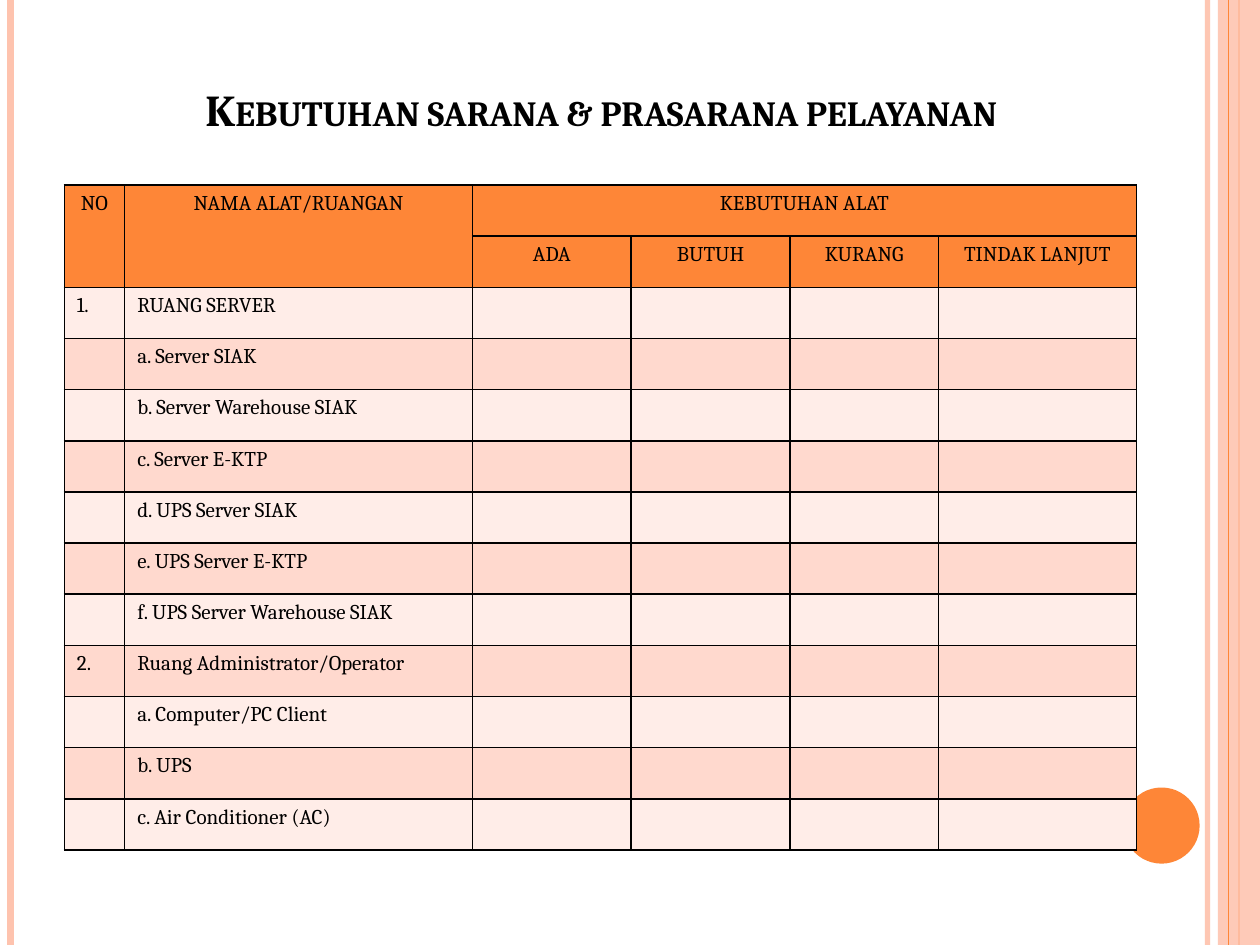
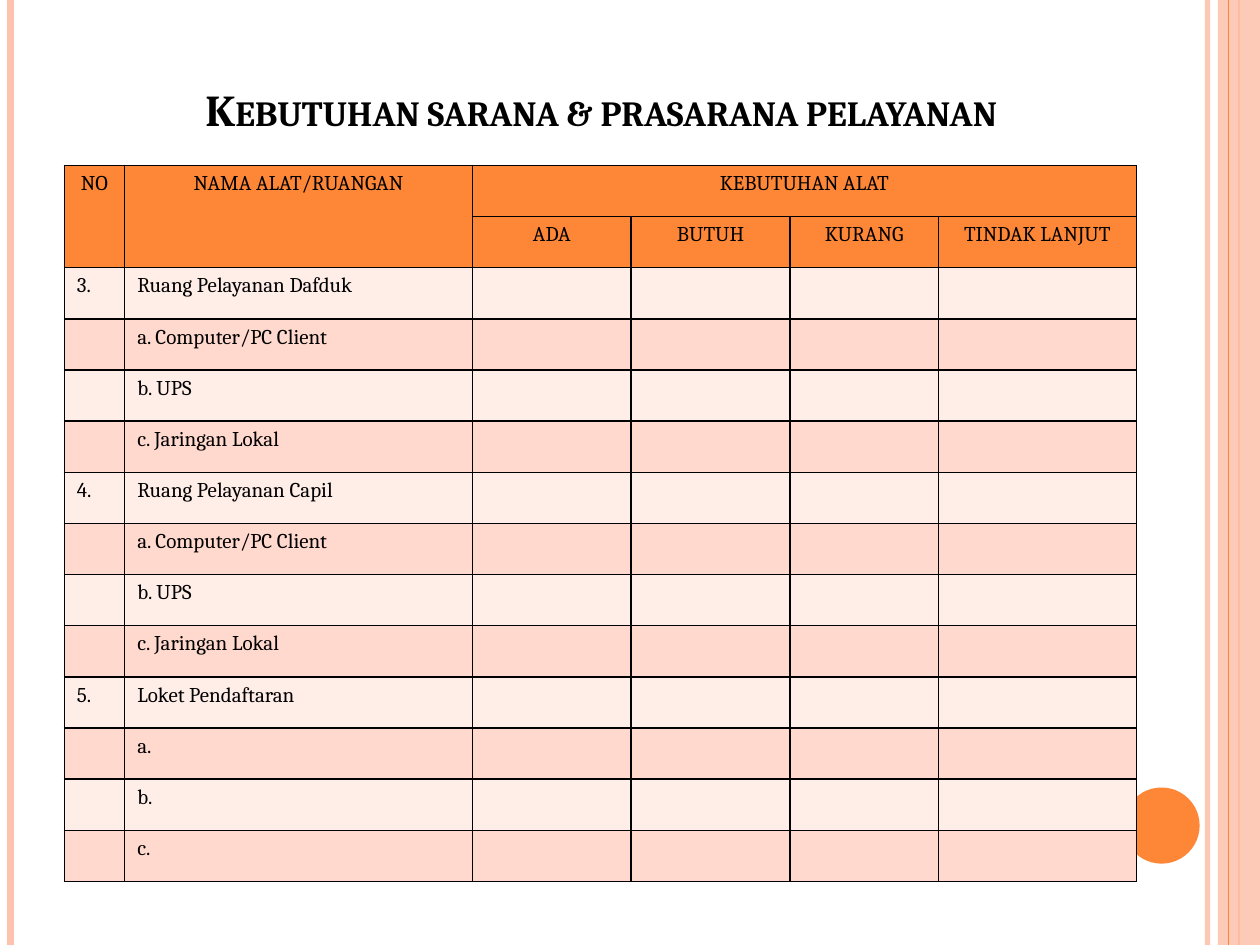
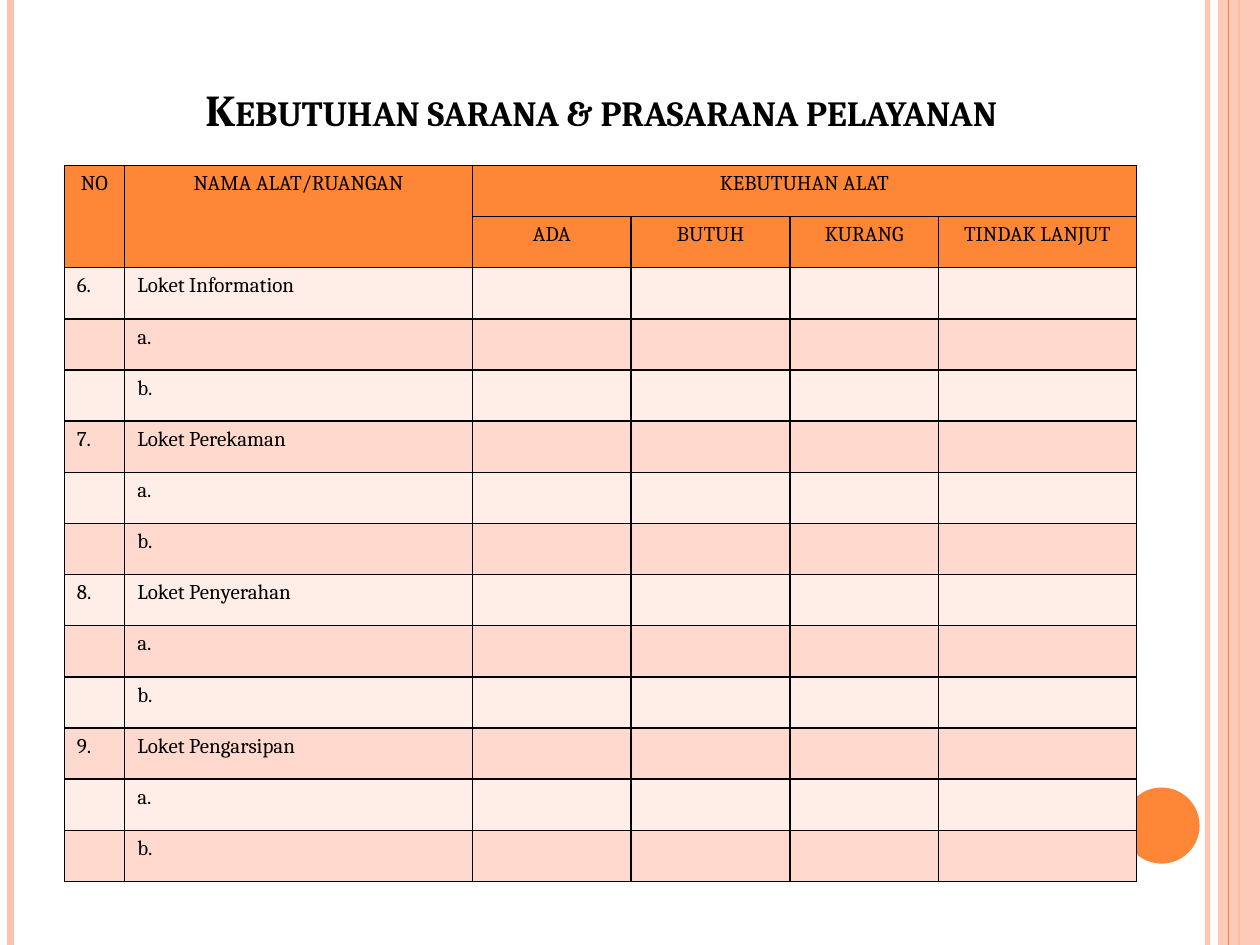
from dataclasses import dataclass
from typing import Iterator

from lxml import etree
from pptx import Presentation
from pptx import util as u
from pptx.dml.color import RGBColor
from pptx.enum import shapes, text
from pptx.oxml import ns

PX = 9525
SLIDE_WIDTH, SLIDE_HEIGHT = 960, 720
ORANGE = RGBColor(0xFE, 0x86, 0x37)
PEACH = RGBColor(0xFE, 0xC3, 0xAE)
ROW_LIGHT = RGBColor(0xFF, 0xED, 0xE8)
ROW_DARK = RGBColor(0xFF, 0xD9, 0xCE)
BLACK = RGBColor(0, 0, 0)
FONT = "Cambria"
TITLE = "Kebutuhan sarana & prasarana pelayanan"
TITLE_ONLY_LAYOUT = 5

TABLE_LEFT = 49
COLUMN_WIDTHS = (46, 265, 121, 121, 113, 151)
ROW_HEIGHT = 39
HEADER_ROWS = (
    ("NO", "NAMA ALAT/RUANGAN", "KEBUTUHAN ALAT", "", "", ""),
    ("", "", "ADA", "BUTUH", "KURANG", "TINDAK LANJUT"),
)
HEADER_MERGES = (((0, 0), (1, 0)), ((0, 1), (1, 1)), ((0, 2), (0, 5)))


@dataclass(frozen=True)
class Stripe:
    x: int
    color: RGBColor
    weight: float
    opacity: int = 100


@dataclass(frozen=True)
class Block:
    kind: shapes.MSO_SHAPE
    left: int
    top: int
    width: int
    height: int
    color: RGBColor
    opacity: int = 100


@dataclass(frozen=True)
class Room:
    number: int
    name: str
    items: tuple[str, ...]


@dataclass(frozen=True)
class Page:
    table_top: int
    rooms: tuple[Room, ...]


DECORATIONS = (
    Stripe(920, PEACH, 3, 93),
    Stripe(8, PEACH, 4.5),
    Stripe(944, ORANGE, 1.5),
    Block(shapes.MSO_SHAPE.RECTANGLE, 928, 0, 32, SLIDE_HEIGHT, PEACH, 87),
    Stripe(936, ORANGE, 0.75),
    Block(shapes.MSO_SHAPE.OVAL, 856, 600, 58, 58, ORANGE),
)

OFFICE_ITEMS = ("Computer/PC Client", "UPS", "Jaringan Lokal")
PAGES = (
    Page(141, (
        Room(1, "RUANG SERVER", (
            "Server SIAK", "Server Warehouse SIAK", "Server E-KTP",
            "UPS Server SIAK", "UPS Server E-KTP", "UPS Server Warehouse SIAK",
        )),
        Room(2, "Ruang Administrator/Operator",
             ("Computer/PC Client", "UPS", "Air Conditioner (AC)")),
    )),
    Page(126, (
        Room(3, "Ruang Pelayanan Dafduk", OFFICE_ITEMS),
        Room(4, "Ruang Pelayanan Capil", OFFICE_ITEMS),
        Room(5, "Loket Pendaftaran", ("",) * 3),
    )),
    Page(126, tuple(
        Room(number, f"Loket {name}", ("",) * 2)
        for number, name in enumerate(
            ("Information", "Perekaman", "Penyerahan", "Pengarsipan"), start=6)
    )),
)


def px(*lengths: int) -> list[u.Emu]:
    return [u.Emu(length * PX) for length in lengths]


def set_opacity(element, percent: int) -> None:
    if percent < 100:
        color = next(element.iter(ns.qn("a:srgbClr")))
        etree.SubElement(color, ns.qn("a:alpha"), val=str(percent * 1000))


def solid_line(tag: str, color: RGBColor, weight: float):
    line = etree.Element(ns.qn(tag), w=str(u.Pt(weight)))
    fill = etree.SubElement(line, ns.qn("a:solidFill"))
    etree.SubElement(fill, ns.qn("a:srgbClr"), val=str(color))
    return line


def draw_stripe(slide, stripe: Stripe):
    connector = slide.shapes.add_connector(
        shapes.MSO_CONNECTOR.STRAIGHT, *px(stripe.x, 0, stripe.x, SLIDE_HEIGHT))
    connector.line.color.rgb = stripe.color
    connector.line.width = u.Pt(stripe.weight)
    properties = connector.element.spPr
    set_opacity(properties, stripe.opacity)
    etree.SubElement(properties, ns.qn("a:effectLst"))
    return connector


def draw_block(slide, block: Block):
    shape = slide.shapes.add_shape(
        block.kind, *px(block.left, block.top, block.width, block.height))
    shape.shadow.inherit = False
    shape.fill.solid()
    shape.fill.fore_color.rgb = block.color
    shape.line.fill.background()
    set_opacity(shape.element.spPr, block.opacity)
    return shape


def decorate_master(presentation, slide) -> None:
    tree = presentation.slide_master.element.cSld.spTree
    for index, item in enumerate(DECORATIONS, start=2):
        draw = draw_stripe if isinstance(item, Stripe) else draw_block
        tree.insert(index, draw(slide, item).element)


def write_title(slide) -> None:
    title = slide.shapes.title
    title.left, title.top, title.width, title.height = px(27, 29, 862, 74)
    frame = title.text_frame
    frame.text = TITLE
    frame.auto_size = text.MSO_AUTO_SIZE.NONE
    frame.vertical_anchor = text.MSO_ANCHOR.BOTTOM
    frame.margin_bottom = 0
    paragraph = frame.paragraphs[0]
    paragraph.alignment = text.PP_ALIGN.CENTER
    font = paragraph.runs[0].font
    font.name, font.size, font.bold = FONT, u.Pt(25.2), True
    font.color.rgb = BLACK
    paragraph.runs[0]._r.get_or_add_rPr().set("cap", "small")


def fill_cell(cell, content: str, color: RGBColor, alignment: text.PP_ALIGN) -> None:
    cell.fill.solid()
    cell.fill.fore_color.rgb = color
    properties = cell._tc.get_or_add_tcPr()
    for index, side in enumerate(("a:lnL", "a:lnR", "a:lnT", "a:lnB")):
        properties.insert(index, solid_line(side, BLACK, 1))
    cell.text_frame.text = content
    paragraph = cell.text_frame.paragraphs[0]
    paragraph.alignment = alignment
    for run in paragraph.runs:
        run.font.name, run.font.size, run.font.bold = FONT, u.Pt(12), False
        run.font.color.rgb = BLACK
        run._r.get_or_add_rPr().insert(0, solid_line("a:ln", BLACK, 0.75))
    if not content:
        etree.SubElement(paragraph._p, ns.qn("a:endParaRPr"), sz="1200")


def room_rows(rooms: tuple[Room, ...]) -> Iterator[tuple[str, ...]]:
    blanks = ("",) * 4
    for room in rooms:
        yield (f"{room.number}.", room.name, *blanks)
        for letter, item in zip("abcdef", room.items):
            yield ("", f"{letter}. {item}".strip(), *blanks)


def draw_table(slide, page: Page) -> None:
    rows = [*HEADER_ROWS, *room_rows(page.rooms)]
    table = slide.shapes.add_table(
        len(rows), len(COLUMN_WIDTHS),
        *px(TABLE_LEFT, page.table_top, sum(COLUMN_WIDTHS), ROW_HEIGHT * len(rows)),
    ).table
    table.first_row = table.horz_banding = False
    for column, width in zip(table.columns, px(*COLUMN_WIDTHS)):
        column.width = width
    for row_index, row in enumerate(rows):
        table.rows[row_index].height = u.Emu(ROW_HEIGHT * PX)
        if row_index < len(HEADER_ROWS):
            color, alignment = ORANGE, text.PP_ALIGN.CENTER
        else:
            color = ROW_DARK if row_index % 2 else ROW_LIGHT
            alignment = text.PP_ALIGN.LEFT
        for column_index, content in enumerate(row):
            fill_cell(table.cell(row_index, column_index), content, color, alignment)
    for first, last in HEADER_MERGES:
        table.cell(*first).merge(table.cell(*last))


def main() -> None:
    presentation = Presentation()
    presentation.slide_width, presentation.slide_height = px(SLIDE_WIDTH, SLIDE_HEIGHT)
    layout = presentation.slide_layouts[TITLE_ONLY_LAYOUT]
    for page in PAGES:
        slide = presentation.slides.add_slide(layout)
        write_title(slide)
        draw_table(slide, page)
    decorate_master(presentation, presentation.slides[0])
    presentation.save("out.pptx")


if __name__ == "__main__":
    main()
